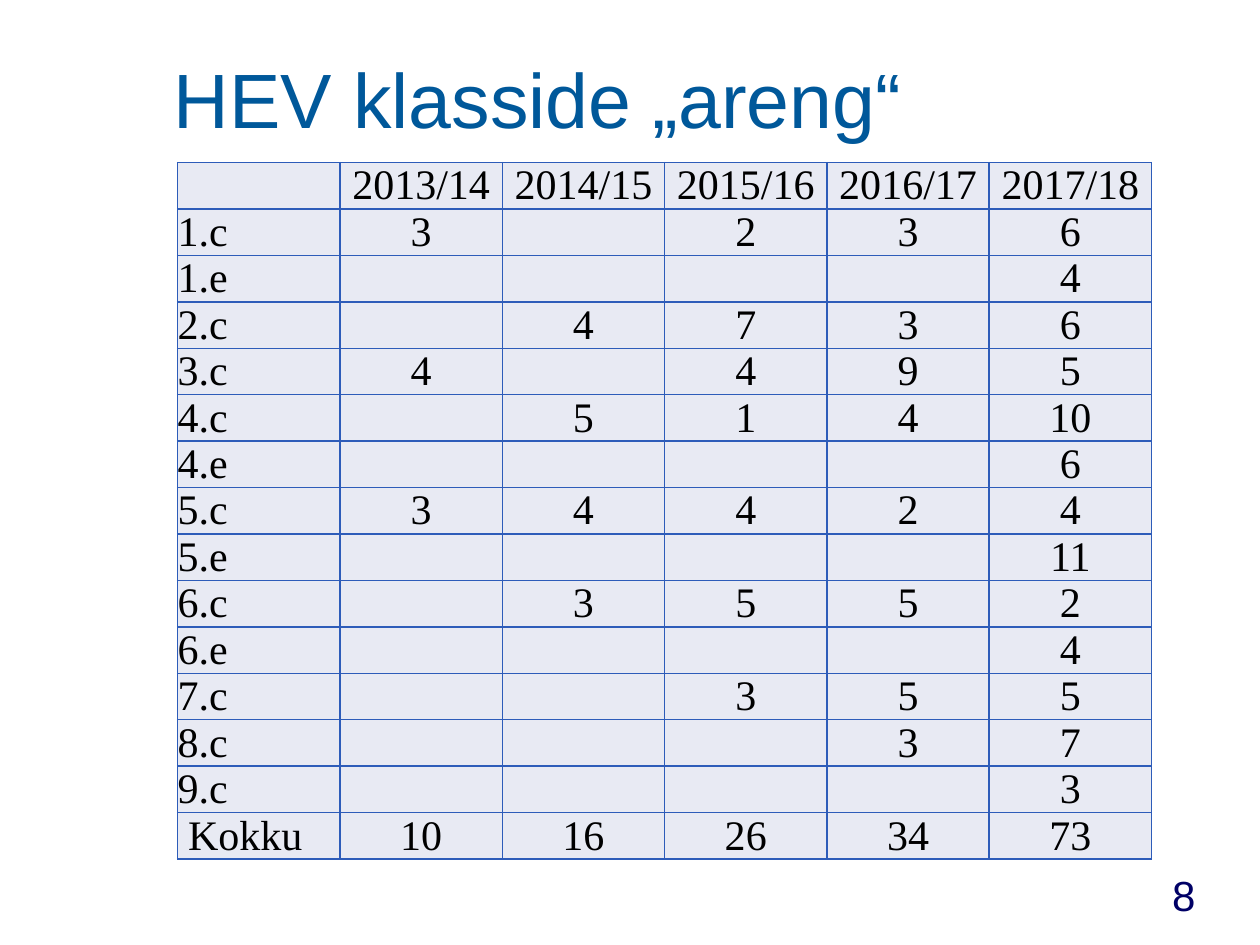
from lxml.etree import SubElement as Sub
from pptx import Presentation
from pptx.dml.color import RGBColor as RGB
from pptx.enum.text import MSO_ANCHOR as Anchor, MSO_AUTO_SIZE as Fit, PP_ALIGN as Align
from pptx.oxml.ns import qn
from pptx.util import Inches, Pt

HUES = {"title": "00589A", "page": "000066", "ink": "000000",
        "cell": "E8EAF3", "rule": "2D5CB9", "back": "FFFFFF"}
FONTS = {
    "title": {"name": "Arial", "size": Pt(44), "bold": False},
    "page": {"name": "Arial", "size": Pt(24)},
    "ink": {"name": "Times New Roman", "size": Pt(24)},
}
FLUSH = {"margin_left": 0, "margin_right": 0, "margin_top": 0, "margin_bottom": 0,
         "vertical_anchor": Anchor.BOTTOM}
TIGHT = {"line_spacing": Pt(26.5), "space_before": Pt(0), "space_after": Pt(0)}
YEARS = ["", "2013/14", "2014/15", "2015/16", "2016/17", "2017/18"]
COUNTS = [
    ["1.c", 3, "", 2, 3, 6],
    ["1.e", "", "", "", "", 4],
    ["2.c", "", 4, 7, 3, 6],
    ["3.c", 4, "", 4, 9, 5],
    ["4.c", "", 5, 1, 4, 10],
    ["4.e", "", "", "", "", 6],
    ["5.c", 3, 4, 4, 2, 4],
    ["5.e", "", "", "", "", 11],
    ["6.c", "", 3, 5, 5, 2],
    ["6.e", "", "", "", "", 4],
    ["7.c", "", "", 3, 5, 5],
    ["8.c", "", "", "", 3, 7],
    ["9.c", "", "", "", "", 3],
    [" Kokku", 10, 16, 26, 34, 73],
]


def apply(item, vals):
    for key, val in vals.items():
        setattr(item, key, val)


def write(frame, text, role, align):
    para = frame.paragraphs[0]
    para.alignment = align
    run = para.add_run()
    run.text = str(text)
    apply(run.font, FONTS[role])
    run.font.color.rgb = RGB.from_string(HUES[role])


def paint(fill, role):
    fill.solid()
    fill.fore_color.rgb = RGB.from_string(HUES[role])


def put_title(slide, box, text):
    title = slide.shapes.title
    apply(title, dict(zip(("left", "top", "width", "height"), box)))
    apply(title.text_frame, {"auto_size": Fit.NONE, "word_wrap": True,
                             "vertical_anchor": Anchor.BOTTOM})
    write(title.text_frame, text, "title", Align.LEFT)


def put_page(slide, box, text):
    frame = slide.shapes.add_textbox(*box).text_frame
    apply(frame, {"word_wrap": False, "auto_size": Fit.SHAPE_TO_FIT_TEXT})
    write(frame, text, "page", Align.CENTER)


def edge(cell):
    props = cell._tc.get_or_add_tcPr()
    for side in ("a:lnL", "a:lnR", "a:lnT", "a:lnB"):
        line = Sub(props, qn(side), w=str(Pt(1)))
        fill = Sub(line, qn("a:solidFill"))
        Sub(fill, qn("a:srgbClr"), val=HUES["rule"])


def put_table(slide, box, data):
    left, top, width, height = box
    table = slide.shapes.add_table(len(data), len(data[0]), *box).table
    apply(table, {"first_row": False, "horz_banding": False})
    for col in table.columns:
        col.width = width // len(data[0])
    for row, vals in zip(table.rows, data):
        row.height = height // len(data)
        for spot, (cell, val) in enumerate(zip(row.cells, vals)):
            apply(cell, FLUSH)
            apply(cell.text_frame.paragraphs[0], TIGHT)
            edge(cell)
            paint(cell.fill, "cell")
            if val != "":
                write(cell.text_frame, val, "ink", Align.CENTER if spot else Align.LEFT)


def main():
    deck = Presentation()
    apply(deck, {"slide_width": Inches(10), "slide_height": Inches(7.5)})
    slide = deck.slides.add_slide(deck.slide_layouts[5])
    paint(slide.background.fill, "back")
    put_page(slide, (Inches(9.09), Inches(6.85), Inches(0.61), Inches(0.5)), "8")
    put_title(slide, (Inches(1.28), Inches(0.25), Inches(8.5), Inches(0.94)),
              "HEV klasside „areng“")
    put_table(slide, (Inches(1.41), Inches(1.29), Inches(7.73), Inches(5.53)),
              [YEARS] + COUNTS)
    deck.save("out.pptx")


if __name__ == "__main__":
    main()
